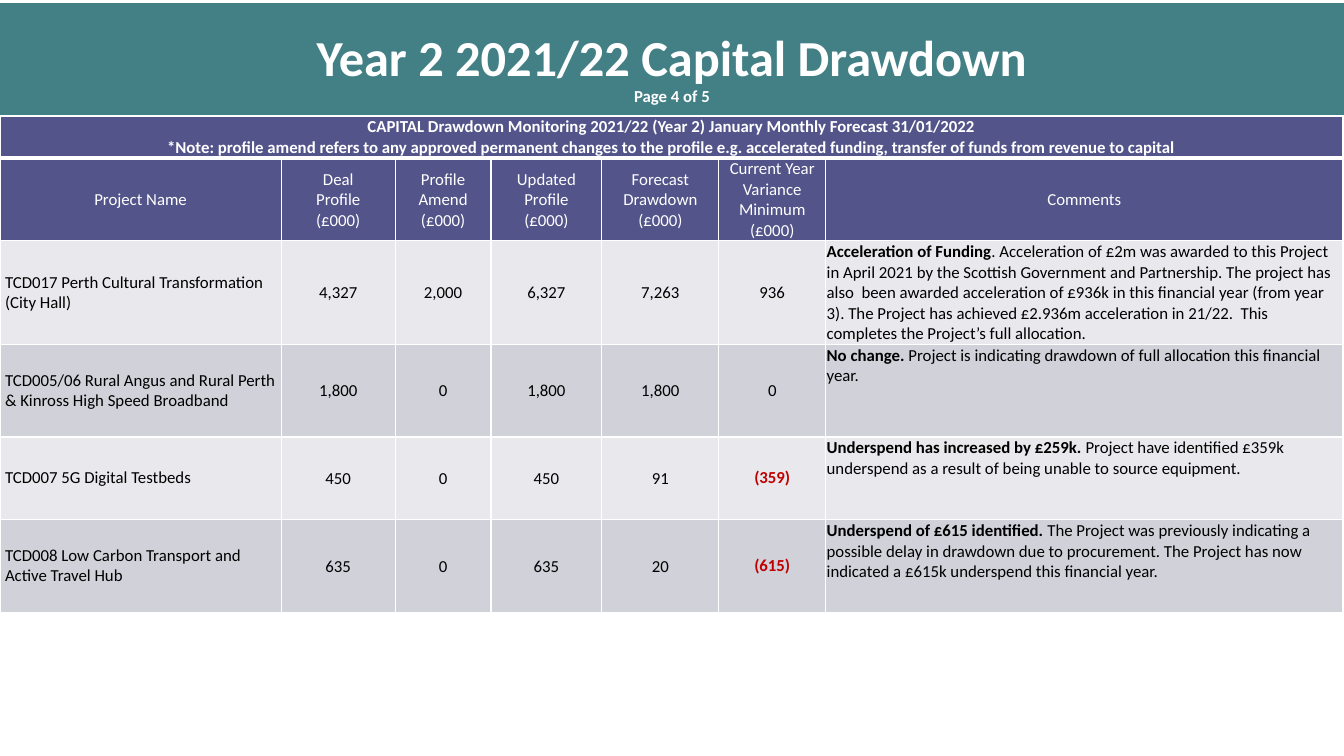
from lxml import etree
from pptx import Presentation
from pptx.dml.color import RGBColor
from pptx.enum.text import MSO_ANCHOR, MSO_AUTO_SIZE, PP_ALIGN
from pptx.oxml.ns import qn
from pptx.util import Inches, Pt

CENTER, LEFT = PP_ALIGN.CENTER, PP_ALIGN.LEFT
MIDDLE, TOP = MSO_ANCHOR.MIDDLE, MSO_ANCHOR.TOP
NO_AUTOFIT = MSO_AUTO_SIZE.NONE
TITLE_ONLY = 5
PAGE_WIDTH, PAGE_HEIGHT = 13.33, 7.5
COLORS = {
    "banner": "438086",
    "header": "53548A",
    "light_band": "E9E9ED",
    "dark_band": "D1D1DA",
    "white": "FFFFFF",
    "text": "000000",
    "negative": "C00000",
}
COLUMN_WIDTHS = [2.79, 1.13, 0.95, 1.1, 1.16, 1.06, 5.13]
ROW_HEIGHTS = [0.41, 0.61, 0.92, 0.92, 0.82, 0.92]
TIGHT = (0.01, 0.01, 0.01, 0)
ROOMY = (0.05, 0.05, 0.05, 0.05)
THIN, THICK = 1, 3

NOTE = [
    "CAPITAL Drawdown Monitoring 2021/22 (Year 2) January Monthly Forecast 31/01/2022",
    "*Note: profile amend refers to any approved permanent changes to the profile "
    "e.g. accelerated funding, transfer of funds from revenue to capital",
]
HEADERS = [
    ["Project Name"],
    ["Deal", "Profile", "(£000)"],
    ["Profile", "Amend", "(£000)"],
    ["Updated", "Profile", "(£000)"],
    ["Forecast", "Drawdown", "(£000)"],
    ["Current Year Variance Minimum", "(£000)"],
    ["Comments"],
]
PROJECTS = [
    ("TCD017 Perth Cultural Transformation (City Hall)",
     ["4,327", "2,000", "6,327", "7,263"], "936",
     "Acceleration of Funding",
     ". Acceleration of £2m was awarded to this Project in April 2021 by the Scottish "
     "Government and Partnership. The project has also  been awarded acceleration of "
     "£936k in this financial year (from year 3). The Project has achieved £2.936m "
     "acceleration in 21/22.  This completes the Project’s full allocation."),
    ("TCD005/06 Rural Angus and Rural Perth & Kinross High Speed Broadband",
     ["1,800", "0", "1,800", "1,800"], "0",
     "No change.",
     " Project is indicating drawdown of full allocation this financial year."),
    ("TCD007 5G Digital Testbeds",
     ["450", "0", "450", "91"], "(359)",
     "Underspend has increased by £259k. ",
     "Project have identified £359k underspend as a result of being unable to source "
     "equipment."),
    ("TCD008 Low Carbon Transport and Active Travel Hub",
     ["635", "0", "635", "20"], "(615)",
     "Underspend of £615 identified. ",
     "The Project was previously indicating a possible delay in drawdown due to "
     "procurement. The Project has now indicated a £615k underspend this financial year."),
]


class DrawdownSlide:
    font = "Calibri"
    size = 12

    def __init__(self, deck):
        self.page = deck.slides.add_slide(deck.slide_layouts[TITLE_ONLY])

    def color(self, name):
        return RGBColor.from_string(COLORS[name])

    def span(self, para, text, color="text", bold=False, size=None):
        span = para.add_run()
        span.text = text
        span.font.name = self.font
        span.font.size = Pt(size or self.size)
        span.font.bold = bold
        span.font.color.rgb = self.color(color)

    def title(self, text, subtitle, top, height):
        box = self.page.shapes.title
        box.left, box.top = 0, Inches(top)
        box.width, box.height = Inches(PAGE_WIDTH), Inches(height)
        box.fill.solid()
        box.fill.fore_color.rgb = self.color("banner")
        frame = box.text_frame
        frame.auto_size = NO_AUTOFIT
        frame.vertical_anchor = MIDDLE
        para = frame.paragraphs[0]
        para.alignment = CENTER
        self.span(para, text, "white", True, 36)
        para.add_line_break()
        self.span(para, subtitle, "white", True)

    def table(self, top, widths, heights):
        frame = self.page.shapes.add_table(
            len(heights), len(widths), 0, Inches(top),
            Inches(sum(widths)), Inches(sum(heights)))
        table = frame.table
        for column, width in zip(table.columns, widths):
            column.width = Inches(width)
        for row, height in zip(table.rows, heights):
            row.height = Inches(height)
        return table

    def borders(self, cell, top, bottom):
        properties = cell._tc.get_or_add_tcPr()
        for side, width in (("L", THIN), ("R", THIN), ("T", top), ("B", bottom)):
            line = etree.SubElement(properties, qn(f"a:ln{side}"), w=str(Pt(width)))
            fill = etree.SubElement(line, qn("a:solidFill"))
            etree.SubElement(fill, qn("a:srgbClr"), val=COLORS["white"])

    def style_cell(self, cell, fill, top=THIN, bottom=THIN):
        self.borders(cell, top, bottom)
        cell.fill.solid()
        cell.fill.fore_color.rgb = self.color(fill)

    def cell_text(self, cell, paragraphs, align=CENTER, anchor=MIDDLE, margins=TIGHT):
        cell.vertical_anchor = anchor
        (cell.margin_left, cell.margin_top,
         cell.margin_right, cell.margin_bottom) = map(Inches, margins)
        frame = cell.text_frame
        for index, spans in enumerate(paragraphs):
            para = frame.add_paragraph() if index else frame.paragraphs[0]
            para.alignment = align
            for text, color, bold in spans:
                self.span(para, text, color, bold)

    def heading_rows(self, table):
        last = len(HEADERS) - 1
        for column, lines in enumerate(HEADERS):
            self.style_cell(table.cell(0, column), "header", bottom=THICK)
            cell = table.cell(1, column)
            self.style_cell(cell, "header", top=THICK)
            self.cell_text(cell, [[(line, "white", False)] for line in lines])
        table.cell(0, 0).merge(table.cell(0, last))
        self.cell_text(table.cell(0, 0), [[(line, "white", True)] for line in NOTE])

    def project_row(self, table, row, project):
        name, amounts, variance, lead, comment = project
        cells = list(table.rows[row].cells)
        for cell in cells:
            self.style_cell(cell, "dark_band" if row % 2 else "light_band")
        self.cell_text(cells[0], [[(name, "text", False)]], LEFT, margins=ROOMY)
        for cell, amount in zip(cells[1:], amounts):
            self.cell_text(cell, [[(amount, "text", False)]])
        negative = variance.startswith("(")
        variance_color = "negative" if negative else "text"
        self.cell_text(cells[-2], [[(variance, variance_color, negative)]], margins=ROOMY)
        self.cell_text(cells[-1], [[(lead, "text", True), (comment, "text", False)]], LEFT, TOP)


def main():
    deck = Presentation()
    deck.slide_width, deck.slide_height = Inches(PAGE_WIDTH), Inches(PAGE_HEIGHT)
    slide = DrawdownSlide(deck)
    slide.title("Year 2 2021/22 Capital Drawdown", "Page 4 of 5", 0.03, 1.25)
    table = slide.table(1.15, COLUMN_WIDTHS, ROW_HEIGHTS)
    slide.heading_rows(table)
    for row, project in enumerate(PROJECTS, start=2):
        slide.project_row(table, row, project)
    deck.save("out.pptx")


if __name__ == "__main__":
    main()
